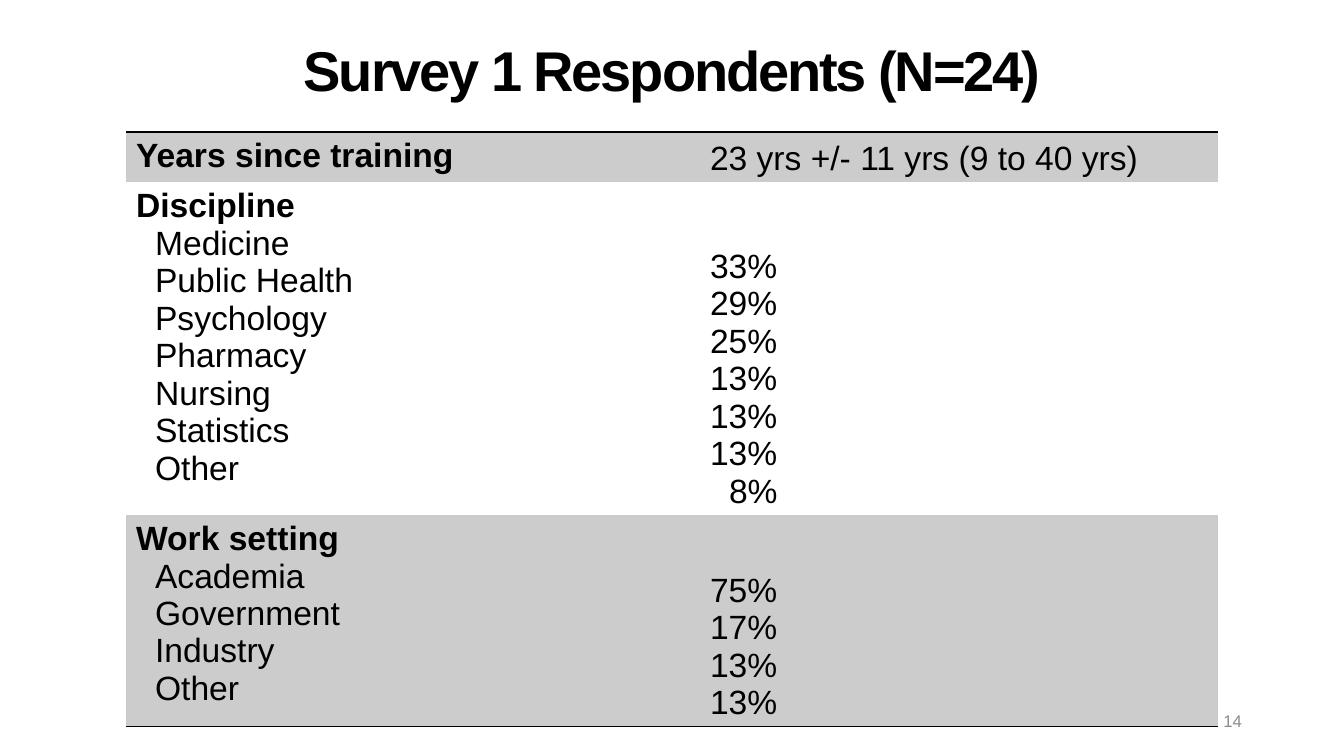
"""Builds the survey respondents slide."""
from dataclasses import dataclass

from lxml.etree import SubElement
from pptx import Presentation
from pptx.dml.color import RGBColor
from pptx.enum.text import MSO_ANCHOR, PP_ALIGN
from pptx.oxml.ns import qn
from pptx.util import Pt

EMU_PER_PX = 914400 / 100.8


@dataclass(frozen=True)
class Theme:
    """Colours and type sizes of the slide."""
    font: str = "Arial"
    ink: str = "000000"
    band: str = "CCCCCC"
    muted: str = "8C8C8C"
    title_size: int = 40
    body_size: int = 24
    number_size: int = 12


THEME = Theme()
GROUPS = [
    ("Years since training", [("", "23 yrs +/- 11 yrs (9 to 40 yrs)")]),
    ("Discipline", [
        ("Medicine", "33%"), ("Public Health", "29%"), ("Psychology", "25%"),
        ("Pharmacy", "13%"), ("Nursing", "13%"), ("Statistics", "13%"),
        ("Other", "8%"),
    ]),
    ("Work setting", [
        ("Academia", "75%"), ("Government", "17%"), ("Industry", "13%"),
        ("Other", "13%"),
    ]),
]
COLUMN_WIDTHS = [574, 518]
ROW_HEIGHTS = [47, 310, 198]
INDENT = 19


def px(length):
    """Turn pixels into EMU."""
    return round(length * EMU_PER_PX)


def style(para, size, color, bold=False):
    """Set the font of a whole paragraph."""
    para.font.name = THEME.font
    para.font.size = Pt(size)
    para.font.bold = bold
    para.font.color.rgb = RGBColor.from_string(color)


def add_text(page, box, text, size, color, align, bold=False):
    """Add one line of text, centred vertically in its box."""
    frame = page.shapes.add_textbox(*map(px, box)).text_frame
    frame.word_wrap = True
    frame.vertical_anchor = MSO_ANCHOR.MIDDLE
    para = frame.paragraphs[0]
    para.text = text
    para.alignment = align
    style(para, size, color, bold)
    return para


def add_title(page, box):
    """Add the tightly spaced slide title."""
    para = add_text(page, box, "Survey 1 Respondents (N=24)",
                    THEME.title_size, THEME.ink, PP_ALIGN.CENTER, True)
    para.line_spacing = 0.9
    para.runs[0].font._element.set("spc", "-150")


def set_borders(cell, ruled):
    """Rule the named sides of a cell and clear the others."""
    properties = cell._tc.get_or_add_tcPr()
    for position, side in enumerate(("lnL", "lnR", "lnT", "lnB")):
        line = properties.makeelement(qn(f"a:{side}"), {"w": str(Pt(1))})
        properties.insert(position, line)
        if side in ruled:
            fill = SubElement(line, qn("a:solidFill"))
            SubElement(fill, qn("a:srgbClr"), val=THEME.ink)
        else:
            SubElement(line, qn("a:noFill"))


def fill_cell(cell, lines, shaded, ruled):
    """Write (text, bold, indented) lines into a cell and paint it."""
    cell.text = "\n".join(text for text, _, _ in lines)
    for para, (_, bold, indented) in zip(cell.text_frame.paragraphs, lines):
        style(para, THEME.body_size, THEME.ink, bold)
        if indented:
            para._p.get_or_add_pPr().set("marL", str(px(INDENT)))
    if shaded:
        cell.fill.solid()
        cell.fill.fore_color.rgb = RGBColor.from_string(THEME.band)
    else:
        cell.fill.background()
    set_borders(cell, ruled)


def add_respondents(page, box):
    """Add the table with one row for each group of answers."""
    table = page.shapes.add_table(len(GROUPS), 2, *map(px, box)).table
    table.first_row = table.horz_banding = False
    for column, width in zip(table.columns, COLUMN_WIDTHS):
        column.width = px(width)
    for index, (heading, answers) in enumerate(GROUPS):
        table.rows[index].height = px(ROW_HEIGHTS[index])
        labels = [(heading, True, False)]
        labels += [(label, False, True) for label, _ in answers if label]
        values = [(value, False, len(value) == 2) for _, value in answers]
        ruled = {0: ["lnT"], len(GROUPS) - 1: ["lnB"]}.get(index, [])
        for column, lines in enumerate((labels, values)):
            cell = table.cell(index, column)
            fill_cell(cell, lines, index % 2 == 0, ruled)
        cell.vertical_anchor = MSO_ANCHOR.BOTTOM


def main():
    """Build and save the deck."""
    deck = Presentation()
    deck.slide_width, deck.slide_height = px(1344), px(756)
    page = deck.slides.add_slide(deck.slide_layouts[6])
    add_title(page, (0, 0, 1344, 146))
    add_respondents(page, (126, 132, sum(COLUMN_WIDTHS), sum(ROW_HEIGHTS)))
    add_text(page, (950, 701, 302, 40), "14", THEME.number_size,
             THEME.muted, PP_ALIGN.RIGHT)
    deck.save("out.pptx")


if __name__ == "__main__":
    main()
